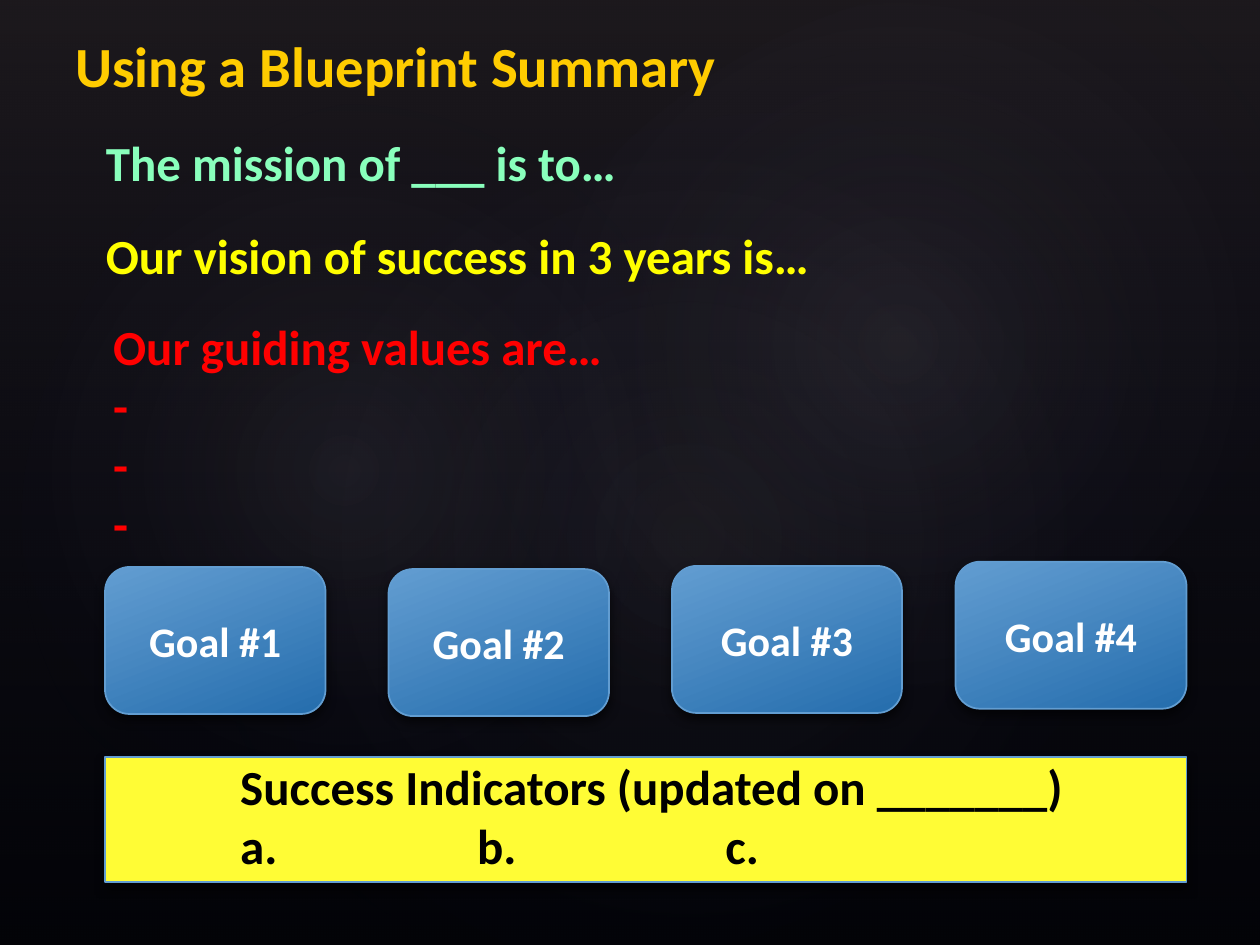
from lxml import etree
from pptx import Presentation
from pptx import util as u
from pptx.dml.color import RGBColor
from pptx.enum import shapes, text
from pptx.oxml import ns

COLS, ROWS = 120, 90  # square grid, 12 units to the inch
prs = Presentation()
prs.slide_width, prs.slide_height = u.Inches(10), u.Inches(7.5)
s = prs.slides.add_slide(prs.slide_layouts[6])
s.background.fill.solid()
s.background.fill.fore_color.rgb = RGBColor.from_string("000000")
KIND = shapes.MSO_SHAPE


def add(kind, x, y, w, h, fill=None, stops=(), angle=None, shadow=False):
    """Add a shape on the grid; kind None gives a text box."""
    cw, rh = prs.slide_width / COLS, prs.slide_height / ROWS
    at = [round(v) for v in (x * cw, y * rh, w * cw, h * rh)]
    if kind is None:
        return s.shapes.add_textbox(*at)
    sp = s.shapes.add_shape(kind, *at)
    sp.shadow.inherit = False
    sp.line.fill.background()
    if fill:
        sp.fill.solid()
        sp.fill.fore_color.rgb = RGBColor.from_string(fill)
    if stops:
        grad = etree.Element(ns.qn("a:gradFill"), rotWithShape="1")
        gs_lst = etree.SubElement(grad, ns.qn("a:gsLst"))
        for pos, color, alpha in stops:
            gs = etree.SubElement(gs_lst, ns.qn("a:gs"), pos=str(pos * 1000))
            clr = etree.SubElement(gs, ns.qn("a:srgbClr"), val=color)
            etree.SubElement(clr, ns.qn("a:alpha"), val=str(alpha * 1000))
        if angle is None:
            way = etree.SubElement(grad, ns.qn("a:path"), path="circle")
            etree.SubElement(way, ns.qn("a:fillToRect"),
                             dict.fromkeys("ltrb", "50000"))
        else:
            etree.SubElement(grad, ns.qn("a:lin"), ang=str(angle * 60000), scaled="0")
        sp._element.spPr.insert(2, grad)
    if shadow:
        sp.line.color.rgb = RGBColor.from_string("629DD1")
        sp.line.width = u.Pt(1)
        effects = sp._element.spPr.find(ns.qn("a:effectLst"))
        outer = etree.SubElement(effects, ns.qn("a:outerShdw"), blurRad=str(u.Pt(6)),
                                 dist=str(u.Pt(3)), dir="5400000", rotWithShape="0")
        clr = etree.SubElement(outer, ns.qn("a:srgbClr"), val="000000")
        etree.SubElement(clr, ns.qn("a:alpha"), val="60000")
    return sp


def write(sp, lines, size, color, anchor=text.MSO_ANCHOR.TOP, align=text.PP_ALIGN.LEFT):
    """Fill a shape with bold paragraphs."""
    tf = sp.text_frame
    tf.word_wrap = True
    tf.vertical_anchor = anchor
    tf.text = "\n".join(lines)
    for p in tf.paragraphs:
        p.alignment = align
        p.font.name, p.font.size, p.font.bold = "Calibri", u.Pt(size), True
        p.font.color.rgb = RGBColor.from_string(color)
    return tf


# Backdrop: a vertical tint and three soft glows
add(KIND.RECTANGLE, 0, 0, COLS, ROWS,
    stops=[(0, "504652", 36), (100, "242852", 10)], angle=90)
for x, y, w, h, turn, alpha in [(18, 13.7, 95, 74.9, 328.7, 7),
                                (-3.6, 15.4, 72.7, 58.8, 294.3, 8),
                                (43, 1.6, 85.1, 62.4, 328.7, 8)]:
    sp = add(KIND.OVAL, x, y, w, h, stops=[(0, "C4BCC6", alpha), (58, "242852", 0)])
    sp.rotation = turn

# Title, mission, vision and values
write(add(None, 6, 2, 111.7, 8), ["Using a Blueprint Summary"], 32.4, "FFCC00",
      anchor=text.MSO_ANCHOR.BOTTOM)
for x, y, w, h, color, lines in [
        (8.9, 12, 56, 6.8, "89FFBC", ["The mission of ___ is to…"]),
        (8.9, 20.9, 95, 6.8, "FFFF00", ["Our vision of success in 3 years is…"]),
        (9.6, 29.6, 61, 23.9, "FF0000", ["Our guiding values are…", "-", "-", "-"])]:
    write(add(None, x, y, w, h), lines, 28, color)

# Goals, one every 27 columns
for i, (y, w) in enumerate([(54, 21), (54.2, 21), (53.9, 21.9), (53.5, 22)]):
    sp = add(KIND.ROUNDED_RECTANGLE, 10 + 27 * i, y, w, 14, shadow=True, angle=69,
             stops=[(0, "629DD1", 100), (100, "256DAD", 100)])
    write(sp, [f"Goal #{i + 1}"], 24, "FFFFFF",
          text.MSO_ANCHOR.MIDDLE, text.PP_ALIGN.CENTER)

# Success indicators, with tab stops for the list
add(KIND.RECTANGLE, 10, 72.1, 103, 11.9, fill="FFFC35", shadow=True)
tf = write(add(None, 21.7, 71.5, 82, 12.5),
           ["Success Indicators (updated on _______)", "a.\tb.\tc."], 28, "000000")
pPr = tf.paragraphs[1]._p.get_or_add_pPr()
tabs = etree.Element(ns.qn("a:tabLst"))
for stop in (1.88, 3.85):
    etree.SubElement(tabs, ns.qn("a:tab"), pos=str(u.Inches(stop)), algn="l")
pPr.insert(0, tabs)

prs.save("out.pptx")
